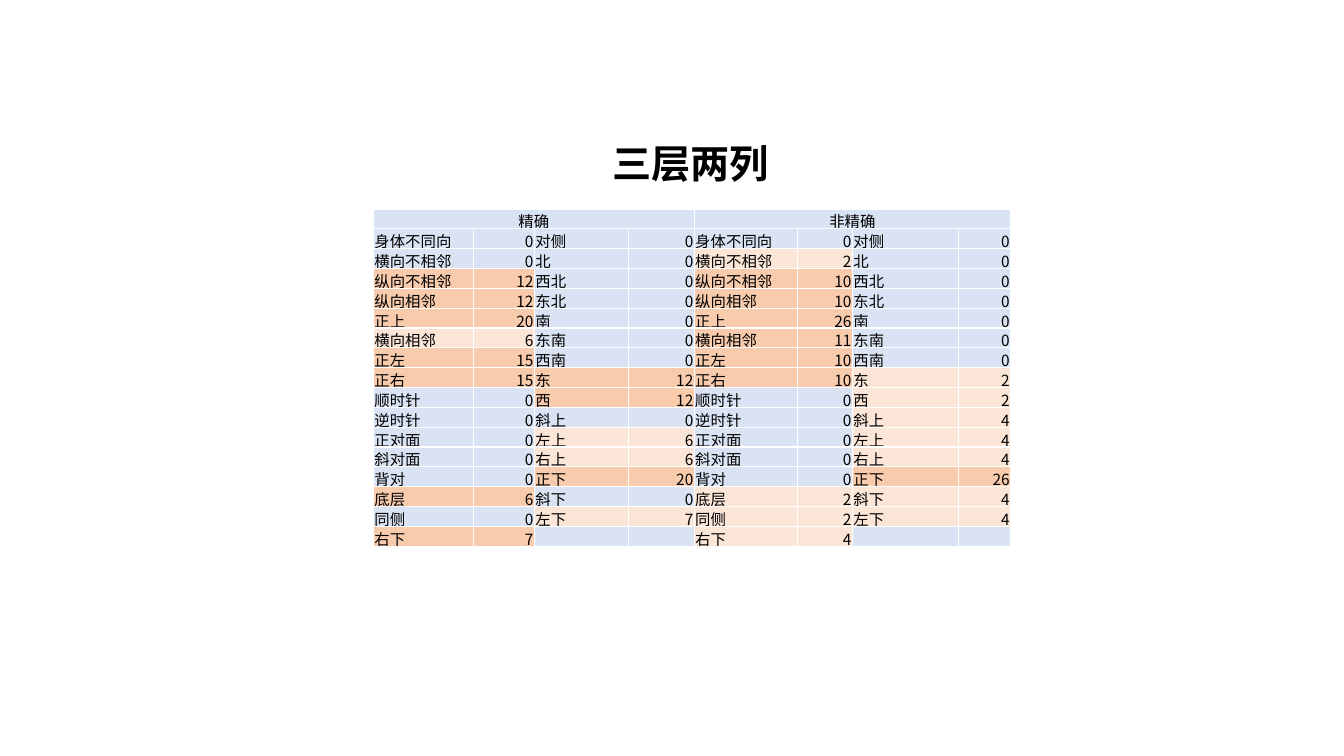
import pptx
import pptx.dml.color
import pptx.enum.text
import pptx.oxml.ns
import pptx.util
from lxml import etree

Pt = pptx.util.Pt
qn = pptx.oxml.ns.qn
ALIGN = pptx.enum.text.PP_ALIGN
ANCHOR = pptx.enum.text.MSO_ANCHOR

NONE, LOW, HIGH = "DAE3F3", "FBE5D6", "F8CBAD"
STRONG = {("底层", 6), ("右下", 7)}  # marked high although below ten

COLUMNS = [71.75, 43.25, 67, 47.25, 73.5, 39.5, 75.5, 37.5]
ROW_HEIGHT = 14.2
GROUPS = ["精确", "非精确"]
# Two labels, then their two values in each group
ROWS = [
    ("身体不同向", "对侧", (0, 0), (0, 0)),
    ("横向不相邻", "北", (0, 0), (2, 0)),
    ("纵向不相邻", "西北", (12, 0), (10, 0)),
    ("纵向相邻", "东北", (12, 0), (10, 0)),
    ("正上", "南", (20, 0), (26, 0)),
    ("横向相邻", "东南", (6, 0), (11, 0)),
    ("正左", "西南", (15, 0), (10, 0)),
    ("正右", "东", (15, 12), (10, 2)),
    ("顺时针", "西", (0, 12), (0, 2)),
    ("逆时针", "斜上", (0, 0), (0, 4)),
    ("正对面", "左上", (0, 6), (0, 4)),
    ("斜对面", "右上", (0, 6), (0, 4)),
    ("背对", "正下", (0, 20), (0, 26)),
    ("底层", "斜下", (6, 0), (2, 4)),
    ("同侧", "左下", (0, 7), (2, 4)),
    ("右下", "", (7, ""), (4, "")),
]


def rgb(value):
    return pptx.dml.color.RGBColor.from_string(value)


def shade(label, value):
    if not value:
        return NONE
    return HIGH if value >= 10 or (label, value) in STRONG else LOW


class Deck:
    cjk = "Noto Sans CJK SC"
    title_font = {"size": Pt(28), "name": "Times New Roman", "bold": True}
    cell_font = {"size": Pt(11), "name": cjk, "bold": False}
    cell_format = {"margin_left": Pt(0.7), "margin_right": Pt(0.7),
                   "margin_top": Pt(0.7), "margin_bottom": 0,
                   "vertical_anchor": ANCHOR.MIDDLE}

    def __init__(self):
        self.prs = pptx.Presentation()
        self.prs.slide_width, self.prs.slide_height = Pt(960), Pt(540)
        self.s = self.prs.slides.add_slide(self.prs.slide_layouts[5])

    def text(self, p, text, font, align):
        p.alignment = align
        if not text:
            # Keeps an empty cell as low as its row
            end = etree.SubElement(p._p, qn("a:endParaRPr"))
            end.set("sz", str(int(font["size"].pt * 100)))
            return
        r = p.add_run()
        r.text = text
        for key, value in font.items():
            setattr(r.font, key, value)
        r.font.color.rgb = rgb("000000")
        ea = etree.Element(qn("a:ea"), typeface=self.cjk)
        r._r.rPr.find(qn("a:latin")).addnext(ea)

    def title(self, text, x, y, w, h):
        sp = self.s.shapes.title
        sp.left, sp.top, sp.width, sp.height = Pt(x), Pt(y), Pt(w), Pt(h)
        tf = sp.text_frame
        tf.word_wrap = True
        tf.vertical_anchor = ANCHOR.TOP
        tf.auto_size = pptx.enum.text.MSO_AUTO_SIZE.SHAPE_TO_FIT_TEXT
        self.text(tf.paragraphs[0], text, self.title_font, ALIGN.LEFT)

    def cell(self, cell, text, fill, align):
        for key, value in self.cell_format.items():
            setattr(cell, key, value)
        # White rules on all four sides
        for side in ("a:lnL", "a:lnR", "a:lnT", "a:lnB"):
            ln = etree.SubElement(cell._tc.tcPr, qn(side), w=str(Pt(1)))
            solid = etree.SubElement(ln, qn("a:solidFill"))
            etree.SubElement(solid, qn("a:srgbClr"), val="FFFFFF")
        cell.fill.solid()
        cell.fill.fore_color.rgb = rgb(fill)
        self.text(cell.text_frame.paragraphs[0], text, self.cell_font, align)

    def table(self, x, y, widths, row_height, rows):
        frame = self.s.shapes.add_table(len(rows), len(widths), Pt(x), Pt(y),
                                        Pt(sum(widths)), Pt(row_height * len(rows)))
        table = frame.table
        for column, width in zip(table.columns, widths):
            column.width = Pt(width)
        for i, row in enumerate(rows):
            table.rows[i].height = Pt(row_height)
            for j, (text, fill, align) in enumerate(row):
                self.cell(table.cell(i, j), text, fill, align)
        return table


def main():
    deck = Deck()
    deck.title("三层两列", 430, 96, 194, 41)

    # Header row, then label and value pairs for both groups
    rows = [[(text, NONE, ALIGN.CENTER)
             for group in GROUPS for text in (group, "", "", "")]]
    for first, second, *groups in ROWS:
        row = []
        for values in groups:
            for label, value in zip((first, second), values):
                fill = shade(label, value)
                row += [(label, fill, ALIGN.LEFT), (str(value), fill, ALIGN.RIGHT)]
        rows.append(row)
    table = deck.table(266.75, 149.25, COLUMNS, ROW_HEIGHT, rows)
    for start in (0, 4):
        table.cell(0, start).merge(table.cell(0, start + 3))

    deck.prs.save("out.pptx")


if __name__ == "__main__":
    main()
